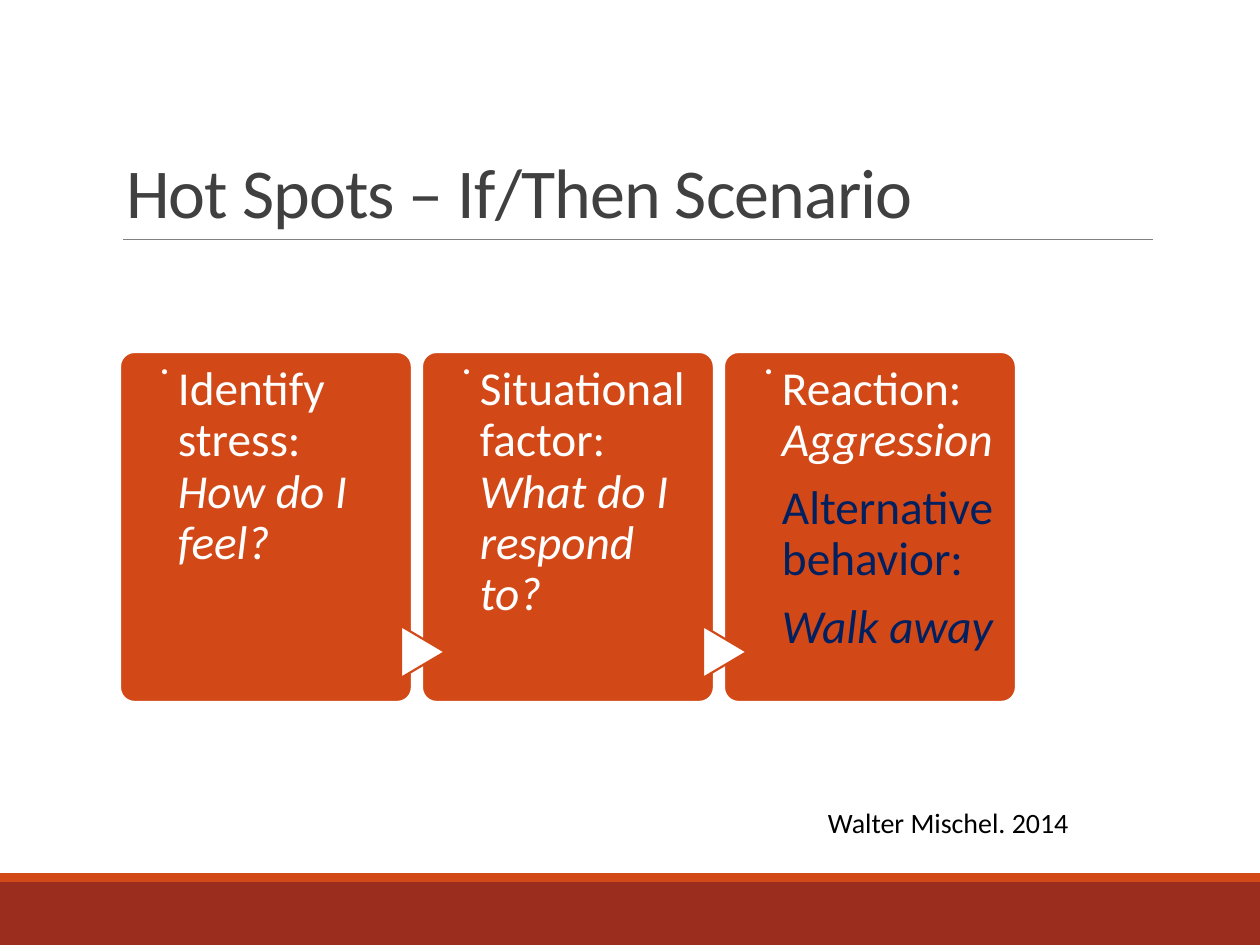
from pptx import Presentation
from pptx.dml.color import RGBColor
from pptx.enum.shapes import MSO_CONNECTOR, MSO_SHAPE
from pptx.enum.text import MSO_ANCHOR, PP_ALIGN
from pptx.oxml.ns import qn
from pptx.util import Pt
from lxml import etree

RECTANGLE = MSO_SHAPE.RECTANGLE
ROUNDED = MSO_SHAPE.ROUNDED_RECTANGLE
TRIANGLE = MSO_SHAPE.FLOWCHART_EXTRACT
STRAIGHT = MSO_CONNECTOR.STRAIGHT
BOTTOM, TOP = MSO_ANCHOR.BOTTOM, MSO_ANCHOR.TOP
RIGHT = PP_ALIGN.RIGHT

WHITE = RGBColor(0xFF, 0xFF, 0xFF)
BLACK = RGBColor(0, 0, 0)
ORANGE = RGBColor(0xD3, 0x48, 0x17)
BRICK = RGBColor(0x9B, 0x2D, 0x1F)
CHARCOAL = RGBColor(0x40, 0x40, 0x40)
GREY = RGBColor(0x80, 0x80, 0x80)
NAVY = RGBColor(0x00, 0x20, 0x60)

PX = 914400 / 126


def add_block(kind, bounds, fill, outline=None):
    block = page.shapes.add_shape(kind, *[round(v * PX) for v in bounds])
    block.shadow.inherit = False
    block.fill.solid()
    block.fill.fore_color.rgb = fill
    if outline is None:
        block.line.fill.background()
    else:
        block.line.color.rgb = outline
        block.line.width = Pt(1.25)
    return block


def add_text(bounds, paragraphs, size, margins=(13, 6, 13, 6), spacing=None, after=0):
    """Each paragraph is (colour, [(text, italic), ...]); margins run left, top, right, bottom."""
    box = page.shapes.add_textbox(*[round(v * PX) for v in bounds])
    frame = box.text_frame
    frame.word_wrap = True
    frame.margin_left, frame.margin_top, frame.margin_right, frame.margin_bottom = [
        round(v * PX) for v in margins]
    for index, (color, spans) in enumerate(paragraphs):
        para = frame.add_paragraph() if index else frame.paragraphs[0]
        para.font.name = "Calibri"
        para.font.size = Pt(size)
        para.font.color.rgb = color
        para.line_spacing = spacing
        para.space_after = Pt(after)
        for text, italic in spans:
            span = para.add_run()
            span.text = text
            span.font.italic = italic
    return box


deck = Presentation()
deck.slide_width = round(1260 * PX)
deck.slide_height = round(945 * PX)
page = deck.slides.add_slide(deck.slide_layouts[6])

# Footer bands, title and rule
add_block(RECTANGLE, (0, 882, 1260, 63), BRICK)
add_block(RECTANGLE, (0, 873, 1260, 9), ORANGE)

rule = page.shapes.add_connector(
    STRAIGHT, *[round(v * PX) for v in (123, 239, 1153, 239)])
rule.line.color.rgb = GREY
rule.line.width = Pt(0.5)
etree.SubElement(rule._element.spPr, qn("a:effectLst"))

title = add_text((113, 39, 1040, 200),
                 [(CHARCOAL, [("Hot Spots – If/Then Scenario", False)])], 40, spacing=0.85)
title.text_frame.vertical_anchor = BOTTOM
title.text_frame.paragraphs[0].runs[0]._r.get_or_add_rPr().set("spc", "-50")

# Three step cards, joined by arrowheads
CARD_LEFT, CARD_TOP, CARD_WIDTH, CARD_HEIGHT, PITCH = 120, 352, 292, 350, 302
steps = [
    [(WHITE, [("Identify stress: ", False), ("How do I feel?", True)])],
    [(WHITE, [("Situational factor: ", False), ("What do I respond to?", True)])],
    [(WHITE, [("Reaction: ", False), ("Aggression", True)]),
     (NAVY, [("Alternative behavior:", False)]),
     (NAVY, [("Walk away", True)])],
]
for number, step in enumerate(steps):
    left = CARD_LEFT + number * PITCH
    card = add_block(ROUNDED, (left, CARD_TOP, CARD_WIDTH, CARD_HEIGHT), ORANGE, WHITE)
    card.adjustments[0] = 0.05

    label = add_text((left - 115, 466, 287, 58), [(WHITE, [(".", False)])], 24,
                     margins=(0, 11, 15, 0), spacing=0.9)
    label.rotation = 270
    label.text_frame.vertical_anchor = TOP
    label.text_frame.paragraphs[0].alignment = RIGHT

    if number:
        arrow = add_block(TRIANGLE, (left - 25, 630, 52, 44), WHITE, ORANGE)
        arrow.rotation = 90

    add_text((left + 58, CARD_TOP, 217, CARD_HEIGHT), step, 27,
             margins=(0, 13, 0, 0), spacing=0.9, after=9.5)

credit = add_text((815, 800, 268, 47), [(BLACK, [("Walter Mischel. 2014", False)])], 16)
credit.text_frame.word_wrap = False

deck.save("out.pptx")
